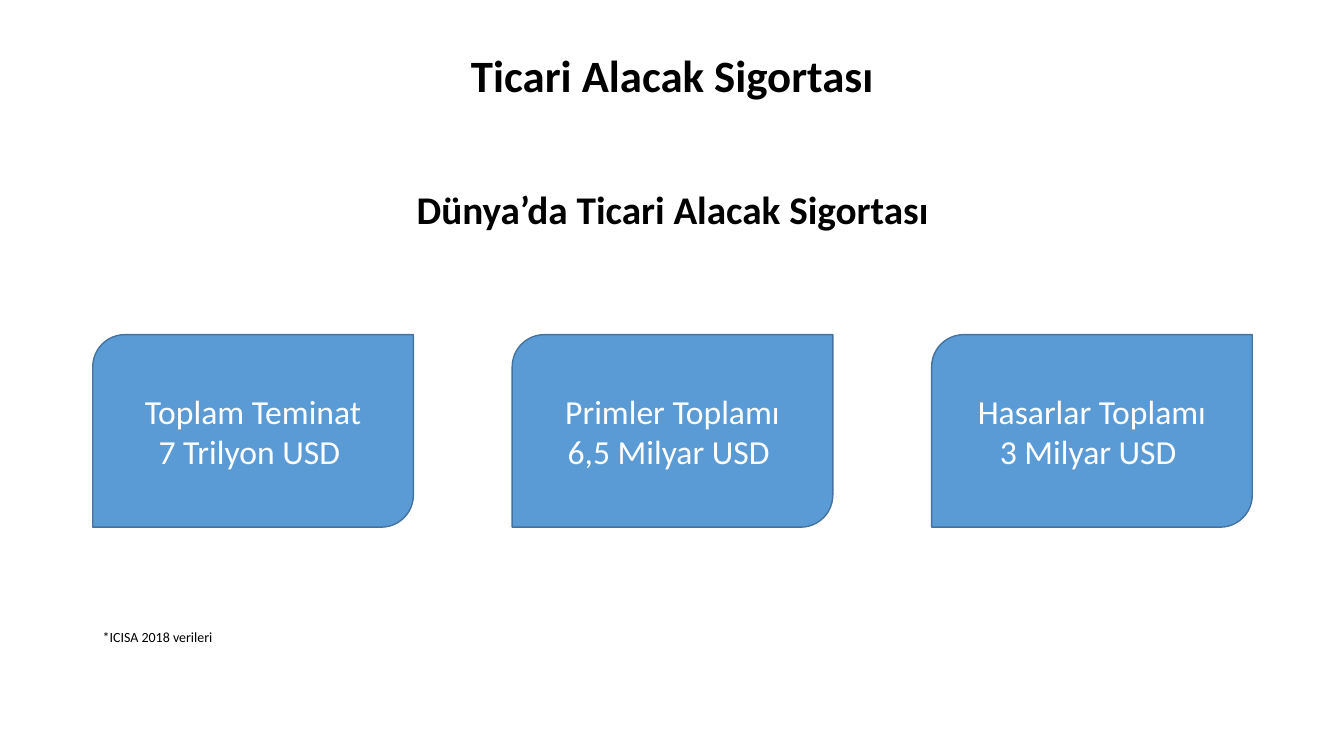
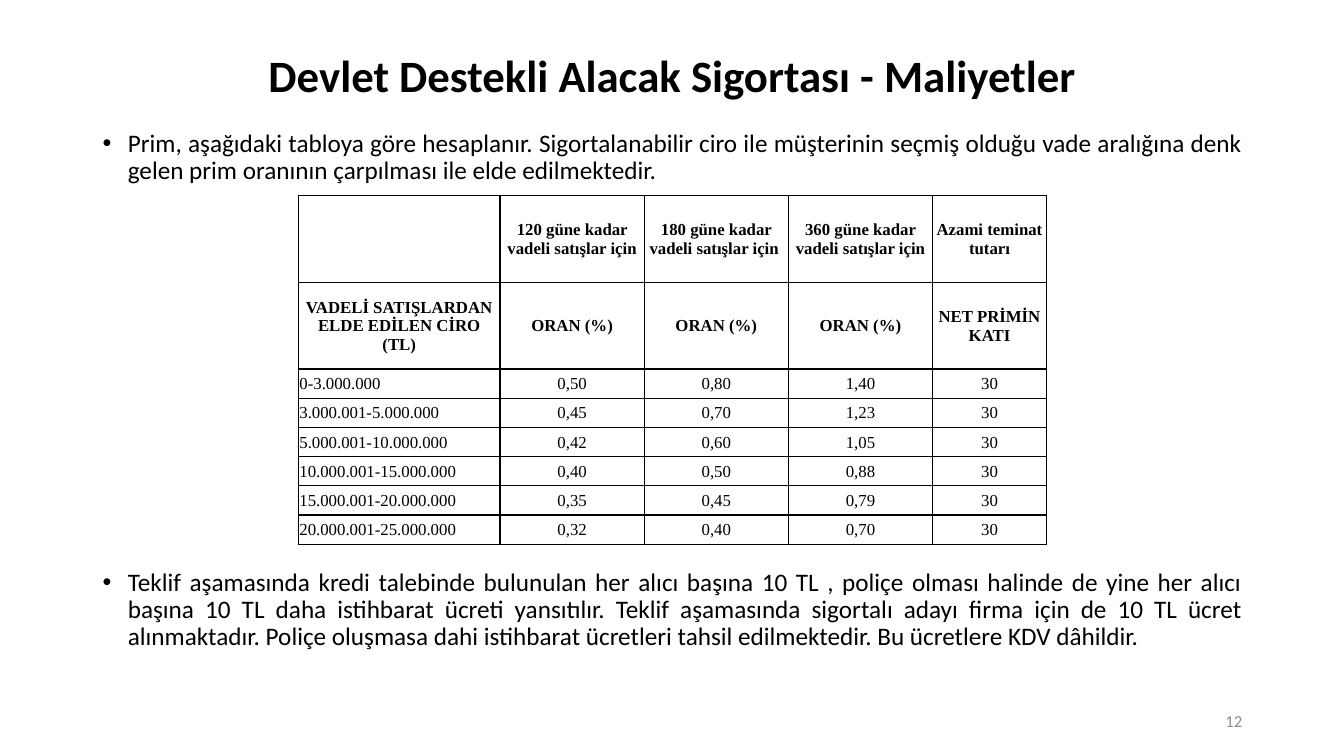
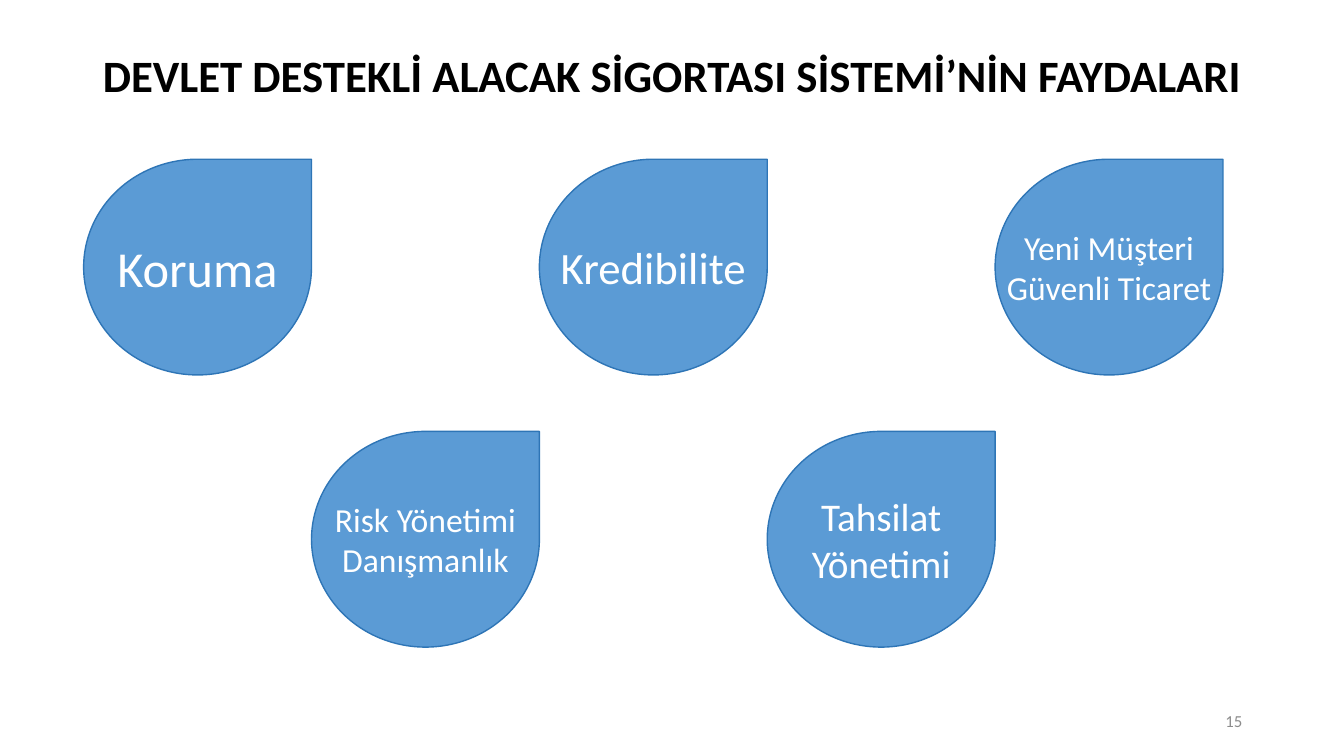
from lxml import etree
from pptx import Presentation
from pptx.dml.color import RGBColor
from pptx.enum.shapes import MSO_SHAPE
from pptx.enum.text import MSO_ANCHOR, PP_ALIGN
from pptx.oxml.ns import qn
from pptx.util import Emu, Pt

PX = 9144
LEFT, CENTER, RIGHT, JUSTIFY = PP_ALIGN.LEFT, PP_ALIGN.CENTER, PP_ALIGN.RIGHT, PP_ALIGN.JUSTIFY
TOP, MIDDLE = MSO_ANCHOR.TOP, MSO_ANCHOR.MIDDLE
DIAG, TEARDROP = MSO_SHAPE.ROUND_2_DIAG_RECTANGLE, MSO_SHAPE.TEAR

COLORS = {
    "ink": "000000",
    "white": "FFFFFF",
    "muted": "8C8C8C",
    "blue": "5B9BD5",
    "edge": "43739E",
    "drop_edge": "2E75B6",
}
MARGIN, CONTENT_W = 92, 1150


def px(n):
    """Turn px into EMU."""
    return Emu(n * PX)


def rgb(name):
    """Look up a named colour."""
    return RGBColor.from_string(COLORS[name])


class Deck:
    """Holds the shared style and the current slide."""

    def __init__(self):
        """Start a wide presentation."""
        self.prs = Presentation()
        self.prs.slide_width, self.prs.slide_height = px(1333), px(750)
        self.s = None

    def slide(self, title, number=None):
        """Add a slide with its title and page number."""
        self.s = self.prs.slides.add_slide(self.prs.slide_layouts[6])
        self.text(MARGIN, 49, CONTENT_W, 56, [title], 32, bold=True, align=CENTER, spacing=0.9)
        if number:
            self.text(942, 695, 300, 40, [number], 12, color="muted", align=RIGHT)

    def add_lines(self, tf, lines, size, color="ink", bold=False, align=LEFT, spacing=None,
                  font="Calibri"):
        """Put one paragraph per line into a text frame."""
        for i, line in enumerate(lines):
            p = tf.paragraphs[0] if i == 0 else tf.add_paragraph()
            p.alignment = align
            if spacing:
                p.line_spacing = spacing
            r = p.add_run()
            r.text = line
            r.font.name, r.font.size, r.font.bold = font, Pt(size), bold
            r.font.color.rgb = rgb(color)

    def text(self, x, y, w, h, lines, size, anchor=MIDDLE, **style):
        """Add a wrapping text box."""
        tf = self.s.shapes.add_textbox(px(x), px(y), px(w), px(h)).text_frame
        tf.word_wrap, tf.vertical_anchor = True, anchor
        self.add_lines(tf, lines, size, **style)
        return tf

    def bullet(self, y, h, line):
        """Add a justified bullet paragraph."""
        tf = self.text(MARGIN, y, CONTENT_W, h, [line], 18, TOP, align=JUSTIFY, spacing=0.9)
        pPr = tf.paragraphs[0]._p.get_or_add_pPr()
        pPr.set("marL", str(px(25)))
        pPr.set("indent", str(px(-25)))
        etree.SubElement(pPr, qn("a:buFont"), typeface="Arial")
        etree.SubElement(pPr, qn("a:buChar"), char="•")

    def shape(self, kind, x, y, w, h, lines, size, edge):
        """Add a blue shape with centred white text."""
        sp = self.s.shapes.add_shape(kind, px(x), px(y), px(w), px(h))
        sp.shadow.inherit = False
        sp.fill.solid()
        sp.fill.fore_color.rgb = rgb("blue")
        sp.line.color.rgb, sp.line.width = rgb(edge), Pt(1)
        tf = sp.text_frame
        tf.word_wrap, tf.vertical_anchor = False, MIDDLE
        self.add_lines(tf, lines, size, color="white", align=CENTER)

    def border(self, cell):
        """Draw a thin line on each side of a cell."""
        tcPr = cell._tc.get_or_add_tcPr()
        for side in ("a:lnL", "a:lnR", "a:lnT", "a:lnB"):
            ln = etree.SubElement(tcPr, qn(side), w=str(Pt(1)))
            fill = etree.SubElement(ln, qn("a:solidFill"))
            etree.SubElement(fill, qn("a:srgbClr"), val=COLORS["ink"])

    def table(self, x, y, widths, heights, rows, headers):
        """Add a ruled table with bold header rows."""
        tbl = self.s.shapes.add_table(len(rows), len(widths), px(x), px(y),
                                      px(sum(widths)), px(sum(heights))).table
        tbl.first_row = tbl.horz_banding = False
        for col, w in zip(tbl.columns, widths):
            col.width = px(w)
        for i, (row, h) in enumerate(zip(rows, heights)):
            tbl.rows[i].height = px(h)
            for j, value in enumerate(row):
                cell = tbl.cell(i, j)
                self.border(cell)
                cell.fill.background()
                cell.vertical_anchor = MIDDLE
                cell.margin_left = cell.margin_right = cell.margin_top = px(1)
                cell.margin_bottom = 0
                if value:
                    head = i < headers
                    self.add_lines(cell.text_frame, [value], 12, bold=head,
                                   align=CENTER if head or j else LEFT, font="Times New Roman")


def world_figures(d):
    """Build the world figures slide."""
    d.slide("Ticari Alacak Sigortası")
    d.text(MARGIN, 183, CONTENT_W, 48, ["Dünya’da Ticari Alacak Sigortası"], 28,
           bold=True, align=CENTER)
    figures = [
        ("Toplam Teminat", "7 Trilyon USD "),
        ("Primler Toplamı", "6,5 Milyar USD "),
        ("Hasarlar Toplamı", "3 Milyar USD "),
    ]
    for i, lines in enumerate(figures):
        d.shape(DIAG, MARGIN + i * 416, 332, 318, 191, lines, 24, "edge")
    d.text(MARGIN, 617, 300, 30, ["*ICISA 2018 verileri"], 10)


def costs(d):
    """Build the premium costs slide."""
    d.slide("Devlet Destekli Alacak Sigortası - Maliyetler", "12")
    d.bullet(125, 65, "Prim, aşağıdaki tabloya göre hesaplanır. Sigortalanabilir ciro ile "
             "müşterinin seçmiş olduğu vade aralığına denk gelen prim oranının çarpılması ile "
             "elde edilmektedir.")
    rates = [
        ("0-3.000.000", "0,50", "0,80", "1,40"),
        ("3.000.001-5.000.000", "0,45", "0,70", "1,23"),
        ("5.000.001-10.000.000", "0,42", "0,60", "1,05"),
        ("10.000.001-15.000.000", "0,40", "0,50", "0,88"),
        ("15.000.001-20.000.000", "0,35", "0,45", "0,79"),
        ("20.000.001-25.000.000", "0,32", "0,40", "0,70"),
    ]
    rows = [
        ("", "120 güne kadar vadeli satışlar için", "180 güne kadar vadeli satışlar için ",
         "360 güne kadar vadeli satışlar için", "Azami teminat tutarı"),
        ("VADELİ SATIŞLARDAN ELDE EDİLEN CİRO (TL)", *["ORAN (%)"] * 3, "NET PRİMİN KATI"),
        *[(*rate, "30") for rate in rates],
    ]
    d.table(296, 194, [200, 143, 143, 143, 113], [86] * 2 + [29] * 6, rows, headers=2)
    d.bullet(560, 95, "Teklif aşamasında kredi talebinde bulunulan her alıcı başına 10 TL , "
             "poliçe olması halinde de yine her alıcı başına 10 TL daha istihbarat ücreti "
             "yansıtılır. Teklif aşamasında sigortalı adayı firma için de 10 TL ücret "
             "alınmaktadır. Poliçe oluşmasa dahi istihbarat ücretleri tahsil edilmektedir. "
             "Bu ücretlere KDV dâhildir.")


def benefits(d):
    """Build the benefits slide."""
    d.slide("DEVLET DESTEKLİ ALACAK SİGORTASI SİSTEMİ’NİN FAYDALARI", "15")
    drops = [
        (["Koruma"], 36),
        (["Risk Yönetimi", "Danışmanlık"], 24),
        (["Kredibilite"], 32),
        (["Tahsilat", "Yönetimi"], 28),
        (["Yeni Müşteri", "Güvenli Ticaret"], 24),
    ]
    for i, (lines, size) in enumerate(drops):
        d.shape(TEARDROP, 83 + i * 226, 158 + i % 2 * 270, 226, 214, lines, size, "drop_edge")


def main():
    """Build and save the deck."""
    d = Deck()
    world_figures(d)
    costs(d)
    benefits(d)
    d.prs.save("out.pptx")


if __name__ == "__main__":
    main()
